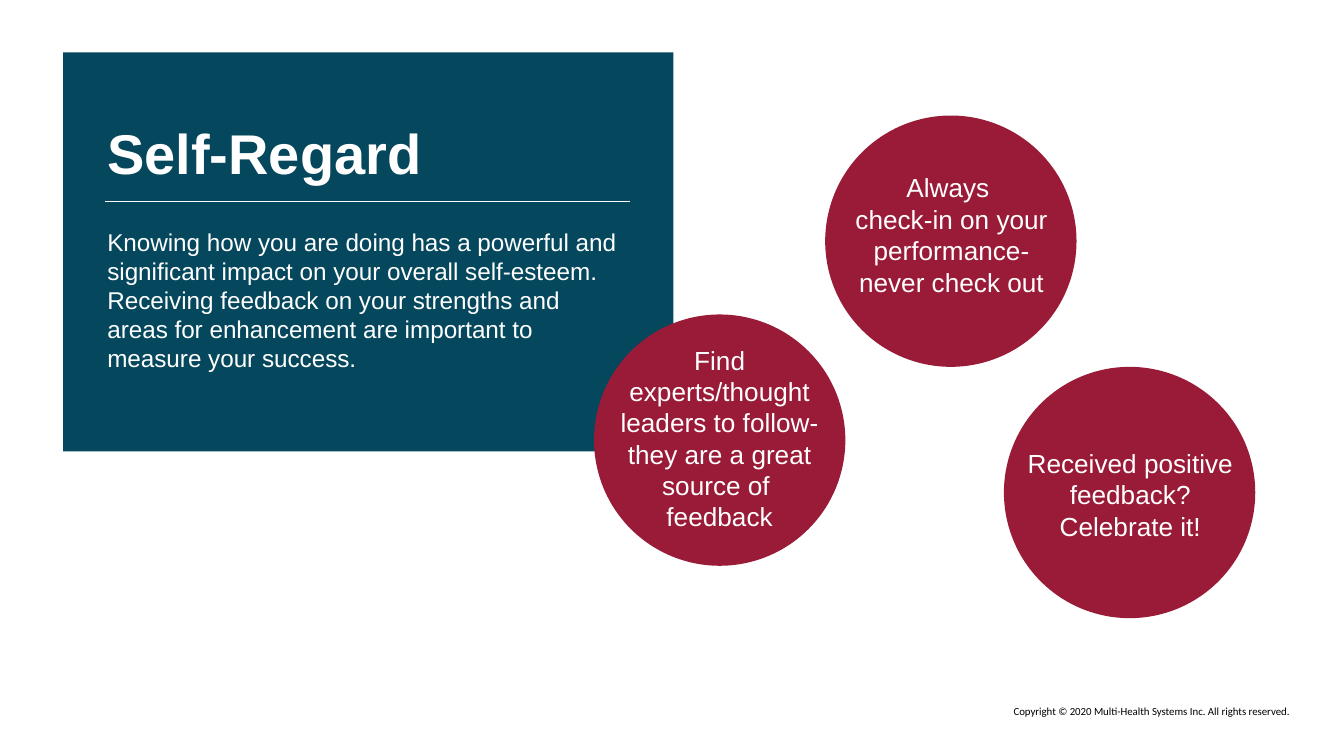
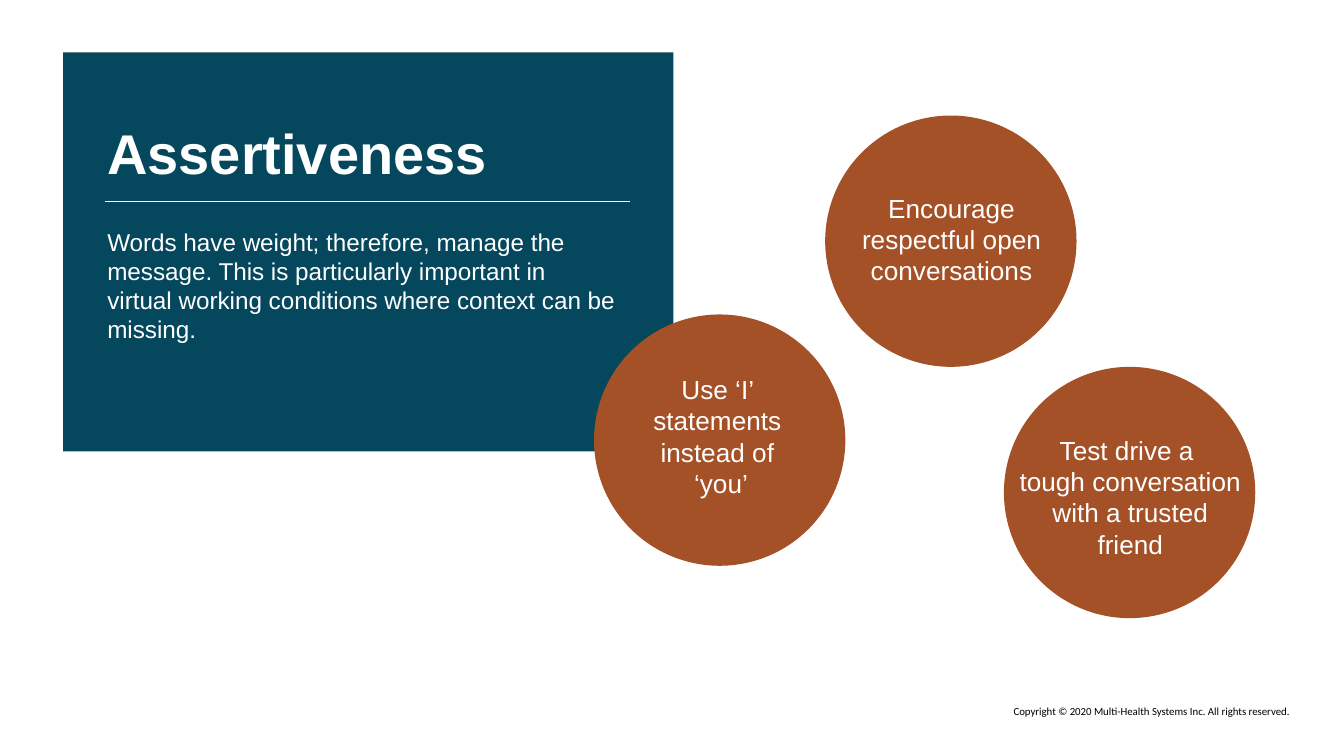
from lxml.etree import SubElement
from pptx import Presentation
from pptx.dml.color import RGBColor
from pptx.enum.shapes import MSO_CONNECTOR, MSO_SHAPE
from pptx.enum.text import MSO_ANCHOR, MSO_AUTO_SIZE, PP_ALIGN
from pptx.oxml.ns import qn
from pptx.util import Inches, Pt

COLORS = {
    "panel": "05475C",
    "white": "FFFFFF",
    "black": "000000",
    "crimson": "9A1B37",
    "rust": "A45128",
}
COPYRIGHT = "Copyright © 2020 Multi-Health Systems Inc. All rights reserved."
PANEL = (0.47, 0.39, 4.54, 2.97)
DIAMETER = 1.87
CIRCLES = [(6.14, 0.86), (4.42, 2.34), (7.47, 2.73)]

SLIDES = [
    {
        "title": "Self-Regard",
        "title_width": 4.06,
        "body": "Knowing how you are doing has a powerful and significant impact on "
                "your overall self-esteem. Receiving feedback on your strengths and "
                "areas for enhancement are important to measure your success.",
        "color": "crimson",
        "tips": [
            ("Received positive feedback? Celebrate it!",
             (7.47, 3.28, 1.88, 0.81)),
            ("Find experts/thought leaders to follow-they are a great source of \vfeedback",
             (4.44, 2.51, 1.83, 1.51)),
            ("Always \vcheck-in on your performance-never check out",
             (6.22, 1.23, 1.72, 1.04)),
        ],
    },
    {
        "title": "Assertiveness",
        "title_width": 4.61,
        "body": "Words have weight; therefore, manage the message. This is "
                "particularly important in virtual working conditions where context "
                "can be missing.",
        "color": "rust",
        "tips": [
            ("Test drive a \vtough conversation \nwith a trusted friend",
             (7.47, 3.18, 1.88, 1.04)),
            ("Use ‘I’ \vstatements \vinstead of \n‘you’",
             (4.45, 2.73, 1.83, 1.04)),
            ("Encourage respectful open conversations",
             (6.22, 1.38, 1.72, 0.81)),
        ],
    },
]


def rgb(name):
    return RGBColor.from_string(COLORS[name])


def add_filled(slide, kind, box, color):
    shape = slide.shapes.add_shape(kind, *map(Inches, box))
    shape.shadow.inherit = False
    shape.fill.solid()
    shape.fill.fore_color.rgb = rgb(color)
    shape.line.fill.background()


def add_text(slide, text, box, size, color="white", font="Arial", bold=False,
             align=PP_ALIGN.LEFT, anchor=MSO_ANCHOR.TOP, grow=False):
    frame = slide.shapes.add_textbox(*map(Inches, box)).text_frame
    frame.word_wrap = True
    frame.vertical_anchor = anchor
    frame.auto_size = MSO_AUTO_SIZE.SHAPE_TO_FIT_TEXT if grow else MSO_AUTO_SIZE.NONE
    frame.text = text
    for paragraph in frame.paragraphs:
        paragraph.alignment = align
        for run in paragraph.runs:
            run.font.name = font
            run.font.size = Pt(size)
            run.font.bold = bold
            run.font.color.rgb = rgb(color)
    return frame


def add_frame(slide):
    add_filled(slide, MSO_SHAPE.RECTANGLE, PANEL, "panel")
    footer = add_text(slide, COPYRIGHT, (7.03, 5.18, 2.66, 0.21), 10, "black",
                      "Calibri", align=PP_ALIGN.RIGHT, grow=True)
    footer.paragraphs[0].runs[0]._r.get_or_add_rPr().set("baseline", "30000")
    rule = slide.shapes.add_connector(
        MSO_CONNECTOR.STRAIGHT, *map(Inches, (0.78, 1.5, 4.69, 1.5)))
    rule.line.color.rgb = rgb("white")
    rule.line.width = Pt(0.75)
    SubElement(rule._element.spPr, qn("a:effectLst"))


def add_topic(presentation, topic):
    slide = presentation.slides.add_slide(presentation.slide_layouts[6])
    add_frame(slide)
    add_text(slide, topic["title"], (0.7, 0.78, topic["title_width"], 0.7), 30,
             bold=True, anchor=MSO_ANCHOR.MIDDLE)
    add_text(slide, topic["body"], (0.7, 1.64, 3.98, 1.64), 13)
    for left, top in CIRCLES:
        add_filled(slide, MSO_SHAPE.OVAL, (left, top, DIAMETER, DIAMETER), topic["color"])
    for text, box in topic["tips"]:
        add_text(slide, text, box, 14, align=PP_ALIGN.CENTER, grow=True)


def main():
    presentation = Presentation()
    presentation.slide_width = Inches(10)
    presentation.slide_height = presentation.slide_width * 9 // 16
    for topic in SLIDES:
        add_topic(presentation, topic)
    presentation.save("out.pptx")


if __name__ == "__main__":
    main()
